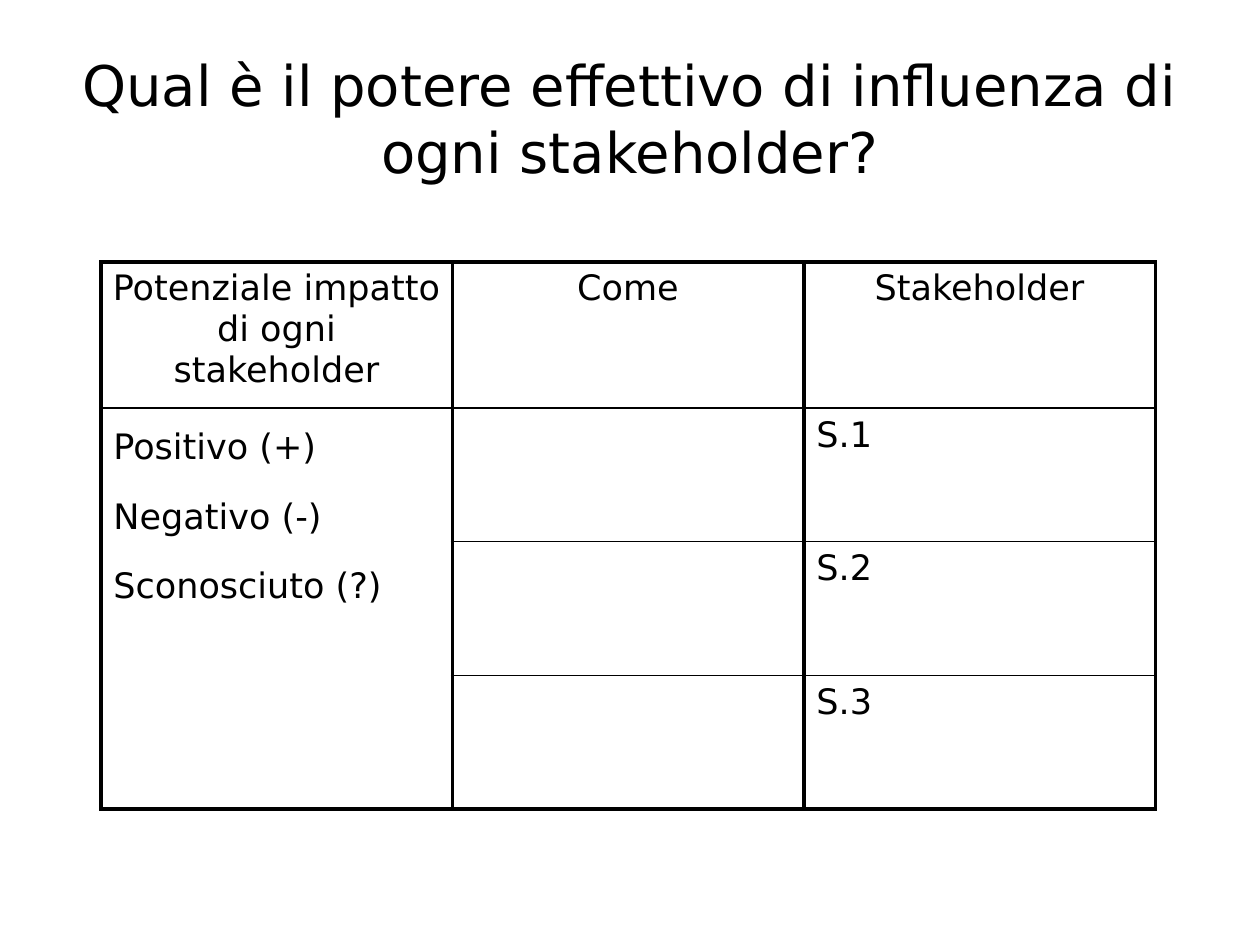
import dataclasses

import lxml.etree
import pptx
import pptx.dml.color
import pptx.enum.text
import pptx.oxml.ns
import pptx.table
import pptx.util

Inches = pptx.util.Inches
Pt = pptx.util.Pt
ALIGN = pptx.enum.text.PP_ALIGN


@dataclasses.dataclass(frozen=True)
class Theme:
    font: str = "DejaVu Sans"
    ink: str = "000000"
    title_size: float = 32
    body_size: float = 20
    outer_line: float = 2.25
    inner_line: float = 1


@dataclasses.dataclass(frozen=True)
class CellContent:
    row: int
    column: int
    lines: tuple[str, ...]
    alignment: ALIGN = ALIGN.LEFT
    side_margin: float = 0.1
    top_margin: float = 0.05


THEME = Theme()
COLUMN_WIDTH = 2.79
ROW_HEIGHTS = (1.16, 1.06, 1.06, 1.06)
COLUMN_COUNT = 3
HEADERS = ("Potenziale impatto di ogni stakeholder", "Come", "Stakeholder")
IMPACTS = ("Positivo (+)", "Negativo (-)", "Sconosciuto (?)")


def apply_format(target: object, values: dict[str, object]) -> None:
    for name, value in values.items():
        setattr(target, name, value)


def format_font(paragraph, size: float) -> None:
    apply_format(paragraph.font, {"name": THEME.font, "size": Pt(size), "bold": False})
    paragraph.font.color.rgb = pptx.dml.color.RGBColor.from_string(THEME.ink)


def add_title(slide, text: str) -> None:
    title = slide.shapes.title
    apply_format(title, {"left": Inches(0.63), "top": Inches(0.38),
                         "width": Inches(8.74), "height": Inches(1.09)})
    apply_format(title.text_frame, {
        "text": text, "word_wrap": True,
        "margin_left": 0, "margin_right": 0, "margin_bottom": 0,
        "margin_top": Inches(0.03),
        "auto_size": pptx.enum.text.MSO_AUTO_SIZE.NONE,
        "vertical_anchor": pptx.enum.text.MSO_ANCHOR.TOP,
    })
    paragraph = title.text_frame.paragraphs[0]
    apply_format(paragraph, {"alignment": ALIGN.CENTER, "line_spacing": Pt(37.9),
                             "space_before": Pt(0)})
    format_font(paragraph, THEME.title_size)


def fill_cell(table: pptx.table.Table, content: CellContent) -> None:
    cell = table.cell(content.row, content.column)
    apply_format(cell, {
        "text": "\n".join(content.lines),
        "margin_left": Inches(content.side_margin),
        "margin_right": Inches(content.side_margin),
        "margin_top": Inches(content.top_margin),
        "margin_bottom": 0,
    })
    for index, paragraph in enumerate(cell.text_frame.paragraphs):
        apply_format(paragraph, {"alignment": content.alignment,
                                 "line_spacing": 1.71 if index else 1.0})
        format_font(paragraph, THEME.body_size)


def draw_borders(cell, is_first_row: bool, is_last_row: bool) -> None:
    """Heavy verticals and outer edges, light lines between rows."""
    properties = cell._tc.get_or_add_tcPr()
    widths = {
        "a:lnL": THEME.outer_line,
        "a:lnR": THEME.outer_line,
        "a:lnT": THEME.outer_line if is_first_row else THEME.inner_line,
        "a:lnB": THEME.outer_line if is_last_row else THEME.inner_line,
    }
    qn = pptx.oxml.ns.qn
    for tag, width in widths.items():
        line = lxml.etree.SubElement(properties, qn(tag), w=str(int(Pt(width))))
        fill = lxml.etree.SubElement(line, qn("a:solidFill"))
        lxml.etree.SubElement(fill, qn("a:srgbClr"), val=THEME.ink)


def add_stakeholder_table(slide, contents: list[CellContent]) -> None:
    row_count = len(ROW_HEIGHTS)
    table = slide.shapes.add_table(
        row_count, COLUMN_COUNT, Inches(0.8), Inches(2.08),
        Inches(COLUMN_WIDTH * COLUMN_COUNT), Inches(sum(ROW_HEIGHTS))).table
    apply_format(table, {"first_row": False, "horz_banding": False})
    for column in table.columns:
        column.width = Inches(COLUMN_WIDTH)
    for row, height in zip(table.rows, ROW_HEIGHTS):
        row.height = Inches(height)

    # The impact cell spans every stakeholder row
    table.cell(1, 0).merge(table.cell(row_count - 1, 0))
    for content in contents:
        fill_cell(table, content)

    for row_index in range(row_count):
        for column_index in range(COLUMN_COUNT):
            cell = table.cell(row_index, column_index)
            if cell.is_spanned:
                continue
            span = cell.span_height if cell.is_merge_origin else 1
            draw_borders(cell, row_index == 0, row_index + span == row_count)
            cell.fill.background()


def main() -> None:
    presentation = pptx.Presentation()
    apply_format(presentation, {"slide_width": Inches(10), "slide_height": Inches(7.5)})
    slide = presentation.slides.add_slide(presentation.slide_layouts[5])

    # Title
    add_title(slide, "Qual è il potere effettivo di influenza di ogni stakeholder?")

    # Table: headers, impact list, numbered stakeholders
    contents = [CellContent(0, column, (header,), ALIGN.CENTER, side_margin=0.09)
                for column, header in enumerate(HEADERS)]
    contents.append(CellContent(1, 0, IMPACTS, top_margin=0.15))
    contents += [CellContent(number, 2, (f"S.{number}",)) for number in range(1, 4)]
    add_stakeholder_table(slide, contents)

    presentation.save("out.pptx")


if __name__ == "__main__":
    main()
